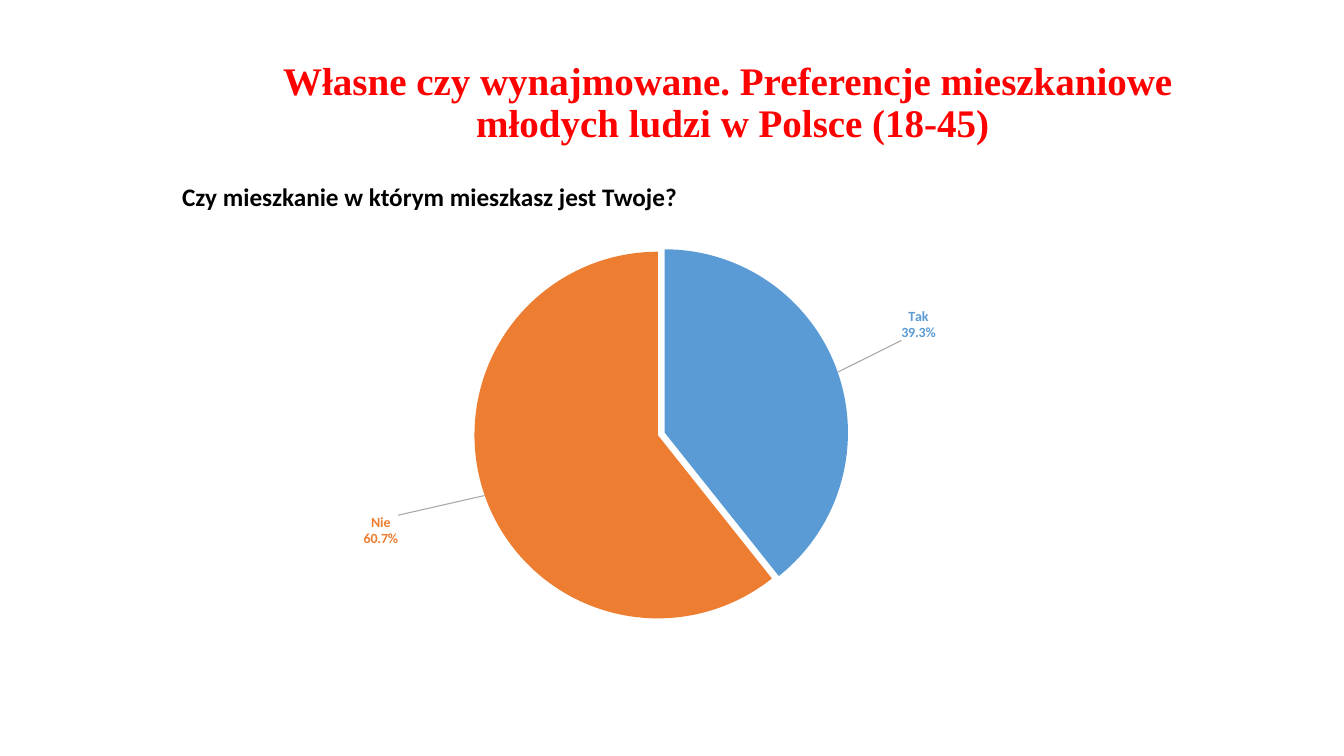
from dataclasses import dataclass
from pptx import Presentation
from pptx.chart.data import CategoryChartData as Data
from pptx.dml.color import RGBColor as Rgb
from pptx.enum.chart import XL_CHART_TYPE as Kind
from pptx.enum.text import MSO_ANCHOR as Anchor, PP_ALIGN as Align
from pptx.oxml import parse_xml as to_xml
from pptx.oxml.ns import nsdecls, qn
from pptx.util import Cm, Pt


@dataclass(frozen=True)
class Theme:
    red: str = "FF0000"
    black: str = "000000"
    yes: str = "5B9BD5"
    no: str = "ED7D31"
    gray: str = "A6A6A6"
    serif: str = "Times New Roman"
    sans: str = "Calibri"
    title: float = 27.9
    ask: float = 18
    label: float = 10


SHOW = """<c:dLblPos val="outEnd"/><c:showLegendKey val="0"/><c:showVal val="0"/>
<c:showCatName val="1"/><c:showSerName val="0"/><c:showPercent val="1"/>
<c:showBubbleSize val="0"/><c:separator>\n</c:separator>"""
FORMAT = '<c:numFmt formatCode="0.0%" sourceLinked="0"/>'


class Page:
    def __init__(self, slide, theme):
        self.slide = slide
        self.theme = theme

    def text(self, box, words, face, size, color, align=Align.LEFT, anchor=Anchor.TOP, gap=1.0):
        frame = self.slide.shapes.add_textbox(*map(Cm, box)).text_frame
        frame.word_wrap = True
        frame.vertical_anchor = anchor
        para = frame.paragraphs[0]
        para.text = words
        para.alignment = align
        para.line_spacing = gap
        font = para.font
        font.name, font.size, font.bold = face, Pt(size), True
        font.color.rgb = Rgb.from_string(color)

    def label(self, index, color, shift):
        x, y = shift
        return f"""<c:dLbl><c:idx val="{index}"/>
<c:layout><c:manualLayout><c:x val="{x}"/><c:y val="{y}"/></c:manualLayout></c:layout>
{FORMAT}<c:spPr><a:noFill/><a:ln><a:noFill/></a:ln></c:spPr>
<c:txPr><a:bodyPr/><a:p><a:pPr><a:defRPr sz="{self.theme.label * 100}" b="1">
<a:solidFill><a:srgbClr val="{color}"/></a:solidFill>
<a:latin typeface="{self.theme.sans}"/></a:defRPr></a:pPr></a:p></c:txPr>{SHOW}</c:dLbl>"""

    def pie(self, box, slices, plot):
        data = Data()
        data.categories = [name for name, *_ in slices]
        data.add_series("Series 1", [value for _, value, *_ in slices])
        chart = self.slide.shapes.add_chart(Kind.PIE, *map(Cm, box), data).chart
        chart.has_title = False
        chart.has_legend = False
        chart.font.name = self.theme.sans
        chart.font.size = Pt(self.theme.label)
        chart.font.color.rgb = Rgb.from_string(self.theme.black)
        chart.plots[0].vary_by_categories = True
        series = chart.plots[0].series[0]
        labels = ""
        for index, (_, _, color, shift) in enumerate(slices):
            fill = series.points[index].format.fill
            fill.solid()
            fill.fore_color.rgb = Rgb.from_string(color)
            labels += self.label(index, color, shift)
        node = series._element
        node.find(qn("c:tx")).addnext(to_xml(f'<c:explosion {nsdecls("c")} val="2"/>'))
        node.find(qn("c:cat")).addprevious(to_xml(
            f'<c:dLbls {nsdecls("c", "a")}>{labels}{FORMAT}{SHOW}<c:showLeaderLines val="1"/>'
            f'<c:leaderLines><c:spPr><a:ln w="9525"><a:solidFill><a:srgbClr val="{self.theme.gray}"/>'
            '</a:solidFill></a:ln></c:spPr></c:leaderLines></c:dLbls>'))
        x, y, w, h = plot
        area = chart._chartSpace.chart.plotArea
        for old in area.findall(qn("c:layout")):
            area.remove(old)
        area.insert(0, to_xml(
            f'<c:layout {nsdecls("c")}><c:manualLayout><c:layoutTarget val="inner"/>'
            '<c:xMode val="edge"/><c:yMode val="edge"/>'
            f'<c:x val="{x}"/><c:y val="{y}"/><c:w val="{w}"/><c:h val="{h}"/>'
            '</c:manualLayout></c:layout>'))


def main():
    theme = Theme()
    deck = Presentation()
    deck.slide_width, deck.slide_height = Cm(33.87), Cm(19.05)
    page = Page(deck.slides.add_slide(deck.slide_layouts[6]), theme)
    page.text((3.86, 1.47, 29.21, 2.29),
              "Własne czy wynajmowane. Preferencje mieszkaniowe \vmłodych ludzi w Polsce (18-45)",
              theme.serif, theme.title, theme.red, Align.CENTER, Anchor.MIDDLE, 0.9)
    page.pie((2.06, 3.38, 29.21, 14.96),
             [("Tak", 39.3, theme.yes, (0.05, -0.05)),
              ("Nie", 60.7, theme.no, (-0.07, 0.03))],
             (0, 0.19, 1, 0.63))
    page.text((4.34, 4.45, 13.41, 1.02), "Czy mieszkanie w którym mieszkasz jest Twoje?",
              theme.sans, theme.ask, theme.black)
    deck.save("out.pptx")


if __name__ == "__main__":
    main()
